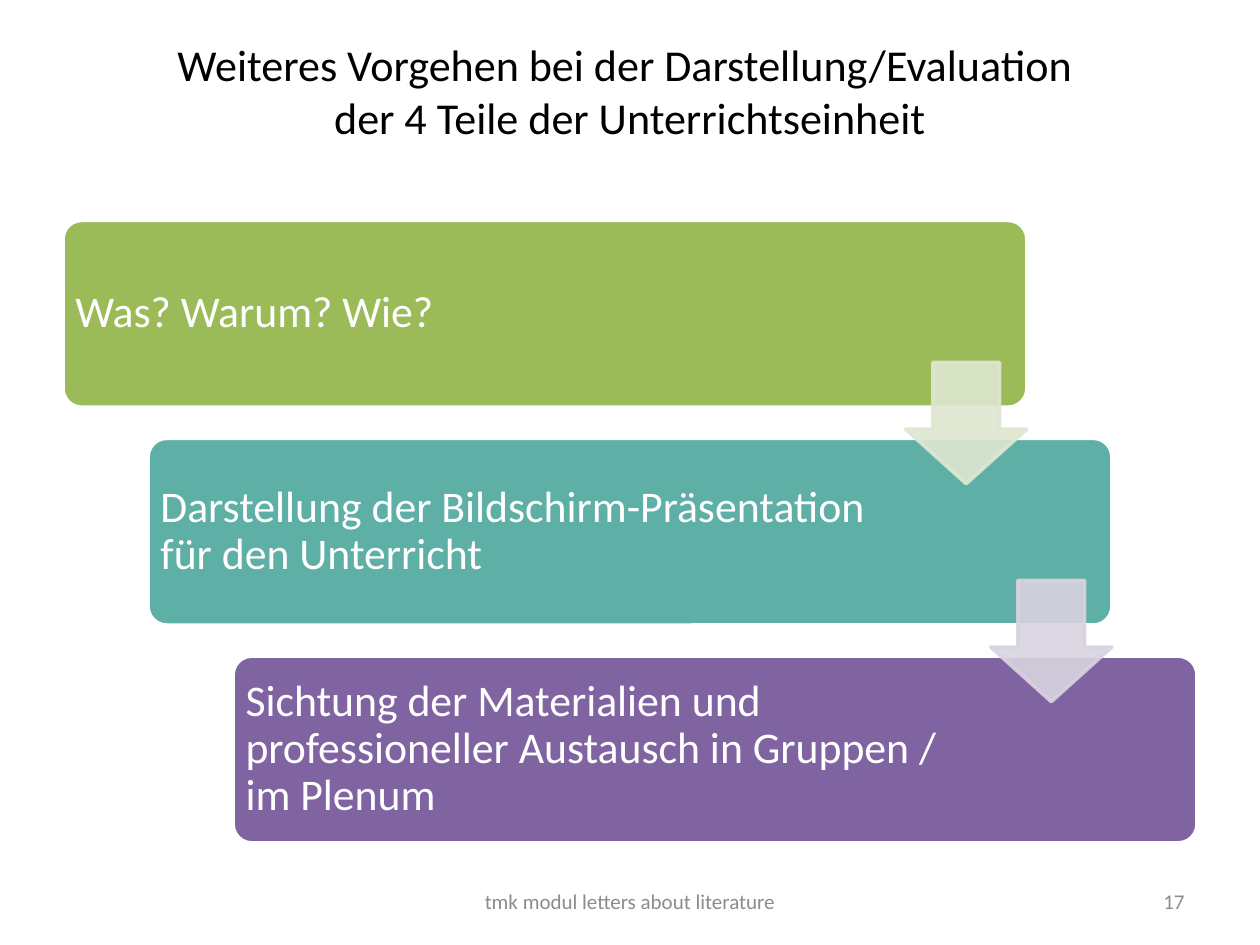
from lxml import etree
from pptx import Presentation
from pptx.dml.color import RGBColor
from pptx.enum.shapes import MSO_SHAPE
from pptx.enum.text import MSO_ANCHOR, PP_ALIGN
from pptx.oxml.ns import qn
from pptx.util import Inches, Pt

COLOURS = {"title": "000000", "white": "FFFFFF", "footer": "8C8C8C"}
# Step text, card colour, text width, colour of the arrow to the next step
STEPS = [
    ("Was? Warum? Wie?", "9BBB59", 6.13, "DEE7D1"),
    ("Darstellung der Bildschirm-Präsentation für den Unterricht", "5EAFA6", 6.01, "D8D3E0"),
    ("Sichtung der Materialien und professioneller Austausch in Gruppen / im Plenum",
     "8064A2", 6.01, None),
]
TITLE_LINES = ["Weiteres Vorgehen bei der Darstellung/Evaluation ",
               "der 4 Teile der Unterrichtseinheit"]


def inches(*lengths):
    return [Inches(length) for length in lengths]


def add_run(paragraph, words, size, colour):
    run = paragraph.add_run()
    run.text = words
    run.font.name = "Calibri"
    run.font.size = Pt(size)
    run.font.color.rgb = RGBColor.from_string(colour)


def add_label(slide, box, words, size, colour, align=PP_ALIGN.LEFT):
    frame = slide.shapes.add_textbox(*inches(*box)).text_frame
    frame.word_wrap = True
    frame.vertical_anchor = MSO_ANCHOR.MIDDLE
    paragraph = frame.paragraphs[0]
    paragraph.alignment = align
    add_run(paragraph, words, size, colour)
    return frame


def add_block(slide, kind, box, adjustments, fill, line, opacity=100):
    block = slide.shapes.add_shape(kind, *inches(*box))
    block.shadow.inherit = False
    for index, value in enumerate(adjustments):
        block.adjustments[index] = value
    block.fill.solid()
    block.fill.fore_color.rgb = RGBColor.from_string(fill)
    block.line.color.rgb = RGBColor.from_string(line)
    block.line.width = Pt(2)
    if opacity < 100:
        for colour in block.element.spPr.iter(qn("a:srgbClr")):
            etree.SubElement(colour, qn("a:alpha"), val=str(opacity * 1000))


def add_title(slide, box):
    title = slide.shapes.title
    title.left, title.top, title.width, title.height = inches(*box)
    frame = title.text_frame
    frame.word_wrap = True
    frame.vertical_anchor = MSO_ANCHOR.MIDDLE
    frame.margin_bottom = Inches(0.47)  # lifts the two lines above the middle
    paragraph = frame.paragraphs[0]
    paragraph.alignment = PP_ALIGN.CENTER
    for number, line in enumerate(TITLE_LINES):
        if number:
            paragraph.add_line_break()
        add_run(paragraph, line, 25.2, COLOURS["title"])


def add_staircase(slide, box):
    left, top, width, height = box
    card_width, card_height = width * 0.85, height * 0.3
    step_x = (width - card_width) / (len(STEPS) - 1)
    step_y = (height - card_height) / (len(STEPS) - 1)
    arrow = card_height * 0.65

    # Cards with their text
    for number, (words, fill, text_width, _) in enumerate(STEPS):
        x, y = left + number * step_x, top + number * step_y
        add_block(slide, MSO_SHAPE.ROUNDED_RECTANGLE, (x, y, card_width, card_height),
                  [0.1], fill, COLOURS["white"])
        frame = add_label(slide, (x, y, text_width, card_height), words, 25, COLOURS["white"])
        frame.margin_left = frame.margin_right = Inches(0.1)
        frame.margin_top = frame.margin_bottom = Inches(0.1)
        frame.paragraphs[0].line_spacing = 0.9

    # Arrows over the lower right corner of each card but the last
    for number, (_, _, _, colour) in enumerate(STEPS[:-1]):
        x = left + number * step_x + card_width - arrow
        y = top + number * step_y + card_height * 0.76
        add_block(slide, MSO_SHAPE.DOWN_ARROW, (x, y, arrow, arrow),
                  [0.55, 0.45], colour, colour, opacity=90)


def add_footer(slide, box):
    left, top, width, height = box
    number_width, note_width = 2.33, 3.17
    add_label(slide, (left + width - number_width, top, number_width, height),
              "17", 12, COLOURS["footer"], PP_ALIGN.RIGHT)
    add_label(slide, (left + (width - note_width) / 2, top, note_width, height),
              "tmk modul letters about literature", 12, COLOURS["footer"], PP_ALIGN.CENTER)


def main():
    deck = Presentation()
    deck.slide_width, deck.slide_height = inches(10, 7.5)
    slide = deck.slides.add_slide(deck.slide_layouts[5])
    margin, content = 0.5, 9
    add_title(slide, (margin, 0.3, content, 1.25))
    add_staircase(slide, (margin, 1.75, content, 4.94))
    add_footer(slide, (margin, 6.95, content, 0.4))
    deck.save("out.pptx")


if __name__ == "__main__":
    main()
